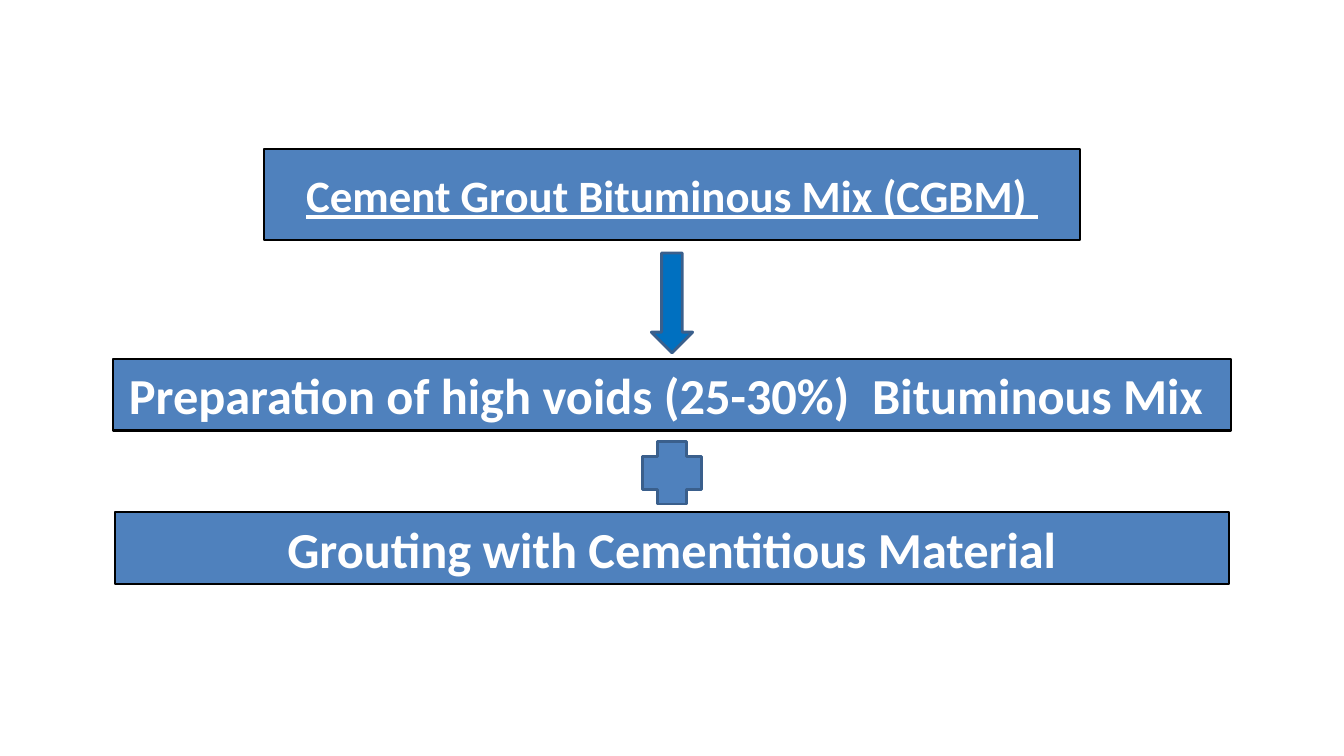
import pptx
import pptx.util
import pptx.dml.color
import pptx.enum.shapes
import pptx.enum.text

PX = 9144
SLIDE_WIDTH, SLIDE_HEIGHT = 1333, 750
SHAPES = pptx.enum.shapes.MSO_SHAPE


def color(value):
    return pptx.dml.color.RGBColor.from_string(value)


def add_centered(kind, top, width, height, fill, line, line_width):
    left = (SLIDE_WIDTH - width) // 2
    shape = slide.shapes.add_shape(kind, left * PX, top * PX, width * PX, height * PX)
    shape.shadow.inherit = False
    shape.fill.solid()
    shape.fill.fore_color.rgb = color(fill)
    shape.line.color.rgb = color(line)
    shape.line.width = pptx.util.Pt(line_width)
    return shape


presentation = pptx.Presentation()
presentation.slide_width = SLIDE_WIDTH * PX
presentation.slide_height = SLIDE_HEIGHT * PX
slide = presentation.slides.add_slide(presentation.slide_layouts[6])

steps = [
    ("Cement Grout Bituminous Mix (CGBM) ", 148, 809, 90, 32, True, 1.75),
    ("Preparation of high voids (25-30%)  Bituminous Mix ", 356, 1109, 71, 36, False, 1.75),
    ("Grouting with Cementitious Material", 508, 1105, 71, 36, False, 1.5),
]
for text, top, width, height, size, underline, line_width in steps:
    box = add_centered(SHAPES.RECTANGLE, top, width, height, "4F81BD", "000000", line_width)
    frame = box.text_frame
    frame.word_wrap = True
    frame.vertical_anchor = pptx.enum.text.MSO_ANCHOR.MIDDLE
    paragraph = frame.paragraphs[0]
    paragraph.alignment = pptx.enum.text.PP_ALIGN.CENTER
    run = paragraph.add_run()
    run.text = text
    run.font.name = "Calibri"
    run.font.size = pptx.util.Pt(size)
    run.font.bold = True
    run.font.underline = underline
    run.font.color.rgb = color("FFFFFF")

add_centered(SHAPES.DOWN_ARROW, 251, 41, 99, "0070C0", "3A5F8C", 2)
add_centered(SHAPES.CROSS, 438, 59, 62, "4F81BD", "3A5F8C", 2)

presentation.save("out.pptx")
